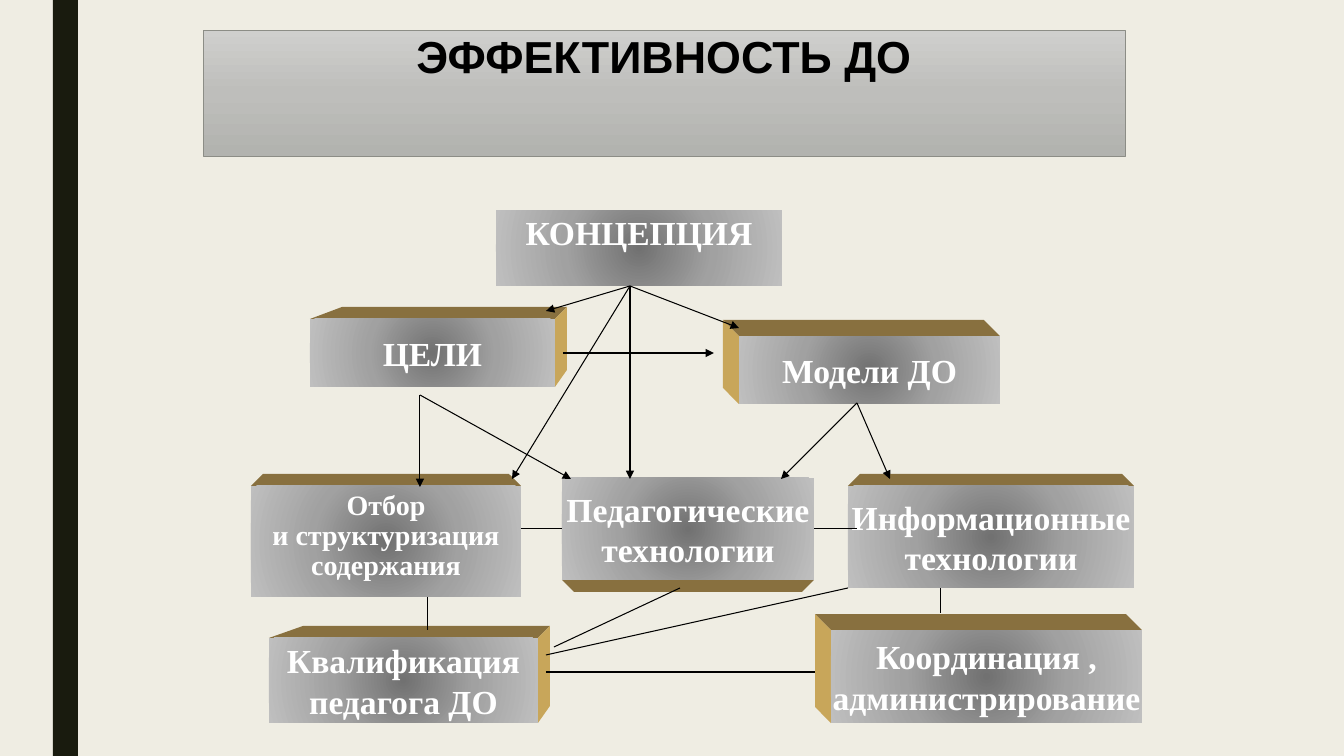
from lxml.etree import SubElement
from pptx import Presentation
from pptx.dml.color import RGBColor
from pptx.enum.shapes import MSO_CONNECTOR, MSO_SHAPE
from pptx.enum.text import MSO_ANCHOR, MSO_AUTO_SIZE, PP_ALIGN
from pptx.oxml import parse_xml
from pptx.oxml.ns import nsdecls, qn
from pptx.util import Emu, Pt

PX = 914400 / 100.8
COLORS = {
    "background": "EFEDE3", "strip": "191B0E", "black": "000000",
    "white": "FFFFFF", "title_line": "8C8D86",
    "edge_dark": "88703F", "edge_light": "C8A65A",
}
TITLE_STOPS = ("CFCFCD", "BEBEBB", "B2B3AF")
BLOCK_STOPS = ("717171", "A1A1A1", "BFBFBF")
LINEAR = '<a:lin ang="5400000" scaled="0"/>'
RADIAL = ('<a:path path="circle"><a:fillToRect l="50000" t="50000" '
          'r="50000" b="50000"/></a:path>')


def px(value):
    """Turn px into EMU."""
    return Emu(round(value * PX))


def color(name):
    """Look up a named colour."""
    return RGBColor.from_string(COLORS[name])


def write_text(shape, text, *, size=24, font="Times New Roman", ink="white",
               spacing=1.0, anchor=MSO_ANCHOR.MIDDLE, wrap=False):
    """Write bold centred lines into a shape."""
    frame = shape.text_frame
    frame.text = text
    frame.auto_size = MSO_AUTO_SIZE.NONE
    frame.word_wrap = wrap
    frame.vertical_anchor = anchor
    for paragraph in frame.paragraphs:
        paragraph.alignment = PP_ALIGN.CENTER
        paragraph.line_spacing = spacing
        paragraph.space_before = Pt(0)
        for run in paragraph.runs:
            run.font.size = Pt(size)
            run.font.name = font
            run.font.bold = True
            run.font.color.rgb = color(ink)


def fill_gradient(shape, stops, direction):
    """Fill a shape with three evenly spaced gradient stops."""
    shape.fill.background()
    marks = "".join(
        f'<a:gs pos="{index * 50000}"><a:srgbClr val="{stop}"/></a:gs>'
        for index, stop in enumerate(stops))
    gradient = parse_xml(f'<a:gradFill {nsdecls("a")} rotWithShape="1">'
                         f'<a:gsLst>{marks}</a:gsLst>{direction}</a:gradFill>')
    properties = shape.element.spPr
    properties.replace(properties.find(qn("a:noFill")), gradient)


class Diagram:
    """Holds the style and the current slide."""

    def __init__(self, presentation):
        """Add a title-only slide with its background."""
        self.slide = presentation.slides.add_slide(presentation.slide_layouts[5])
        self.shapes = self.slide.shapes
        fill = self.slide.background.fill
        fill.solid()
        fill.fore_color.rgb = color("background")

    def title(self, text, left, top, width, height):
        """Place and format the title."""
        shape = self.shapes.title
        shape.left, shape.top = px(left), px(top)
        shape.width, shape.height = px(width), px(height)
        fill_gradient(shape, TITLE_STOPS, LINEAR)
        shape.line.color.rgb = color("title_line")
        shape.line.width = Pt(0.5)
        write_text(shape, text, size=32, font="Arial", ink="black",
                   spacing=0.89, anchor=MSO_ANCHOR.TOP, wrap=True)

    def rectangle(self, left, top, width, height):
        """Add a rectangle without outline or shadow."""
        shape = self.shapes.add_shape(MSO_SHAPE.RECTANGLE, px(left), px(top),
                                      px(width), px(height))
        shape.shadow.inherit = False
        shape.line.fill.background()
        return shape

    def strip(self, left, top, width, height):
        """Add the dark vertical strip."""
        shape = self.rectangle(left, top, width, height)
        shape.fill.solid()
        shape.fill.fore_color.rgb = color("strip")

    def face(self, points, fill):
        """Add one side face of a block."""
        builder = self.shapes.build_freeform(*points[0], scale=PX)
        builder.add_line_segments(points[1:], close=True)
        shape = builder.convert_to_shape()
        shape.shadow.inherit = False
        shape.fill.solid()
        shape.fill.fore_color.rgb = color(fill)
        shape.line.fill.background()

    def block(self, text, box, depth=(0, 0, 0, 0), **text_format):
        """Add a block whose back edges are shifted by depth (left, top, right, bottom)."""
        left, top, width, height = box
        right, bottom = left + width, top + height
        back_left, back_top, back_right, back_bottom = (
            edge + shift for edge, shift in zip((left, top, right, bottom), depth))
        front = ((left, top), (right, top), (right, bottom), (left, bottom))
        back = ((back_left, back_top), (back_right, back_top),
                (back_right, back_bottom), (back_left, back_bottom))
        sides = ((back_top < top, "edge_dark"), (back_right > right, "edge_light"),
                 (back_bottom > bottom, "edge_dark"), (back_left < left, "edge_light"))
        for start, (visible, fill) in enumerate(sides):
            if visible:
                end = (start + 1) % 4
                self.face((front[start], back[start], back[end], front[end]), fill)
        shape = self.rectangle(*box)
        fill_gradient(shape, BLOCK_STOPS, RADIAL)
        write_text(shape, text, **text_format)
        return shape

    def link(self, start, end, arrow=False):
        """Add a thin black line, with an arrowhead if asked."""
        connector = self.shapes.add_connector(
            MSO_CONNECTOR.STRAIGHT, *map(px, start), *map(px, end))
        connector.line.color.rgb = color("black")
        connector.line.width = Pt(0.75)
        if arrow:
            SubElement(connector.line._get_or_add_ln(), qn("a:tailEnd"), type="triangle")
        SubElement(connector.element.spPr, qn("a:effectLst"))
        return connector


def main():
    """Build and save the slide."""
    presentation = Presentation()
    presentation.slide_width, presentation.slide_height = px(1344), px(756)
    diagram = Diagram(presentation)
    diagram.strip(53, 0, 25, 756)
    diagram.title("ЭФФЕКТИВНОСТЬ ДО", 203, 30, 922, 126)

    diagram.block("КОНЦЕПЦИЯ", (496, 210, 286, 76), spacing=0.94,
                  anchor=MSO_ANCHOR.TOP)
    diagram.block("ЦЕЛИ", (310, 319, 245, 68), (32, -12, 12, -17))
    diagram.block("Отбор\nи структуризация\nсодержания", (251, 486, 270, 111),
                  (12, -12, -12, 0), size=20, spacing=0.9, anchor=MSO_ANCHOR.TOP)
    diagram.block("Модели ДО", (739, 336, 261, 68), (-16, -16, -16, -16))
    diagram.block("Информационные\nтехнологии", (848, 486, 286, 102),
                  (12, -12, -12, 0))
    pedagogy = diagram.block("Педагогические\nтехнологии", (562, 478, 252, 102),
                             (12, 0, -12, 12))
    diagram.block("Квалификация\nпедагога ДО", (269, 638, 269, 85),
                  (34, -12, 12, -17))
    diagram.block("Координация ,\nадминистрирование", (831, 630, 311, 93),
                  (-16, -16, -16, -16))

    concept, goals, models = (630, 286), (420, 395), (857, 403)
    arrows = {
        concept: ((546, 311), (630, 479), (512, 479), (739, 328)),
        goals: ((420, 487), (571, 479)),
        models: ((781, 479), (890, 479)),
        (563, 353): ((714, 353),),
    }
    for start, ends in arrows.items():
        for end in ends:
            diagram.link(start, end, arrow=True)

    diagram.link((521, 529), (562, 529)).end_connect(pedagogy, 1)
    diagram.link((814, 529), (857, 529)).begin_connect(pedagogy, 3)
    for start, end in (
        ((680, 588), (554, 647)), ((848, 588), (546, 655)),
        ((941, 588), (941, 613)), ((428, 597), (428, 630)),
        ((546, 672), (815, 672)),
    ):
        diagram.link(start, end)
    presentation.save("out.pptx")


if __name__ == "__main__":
    main()
